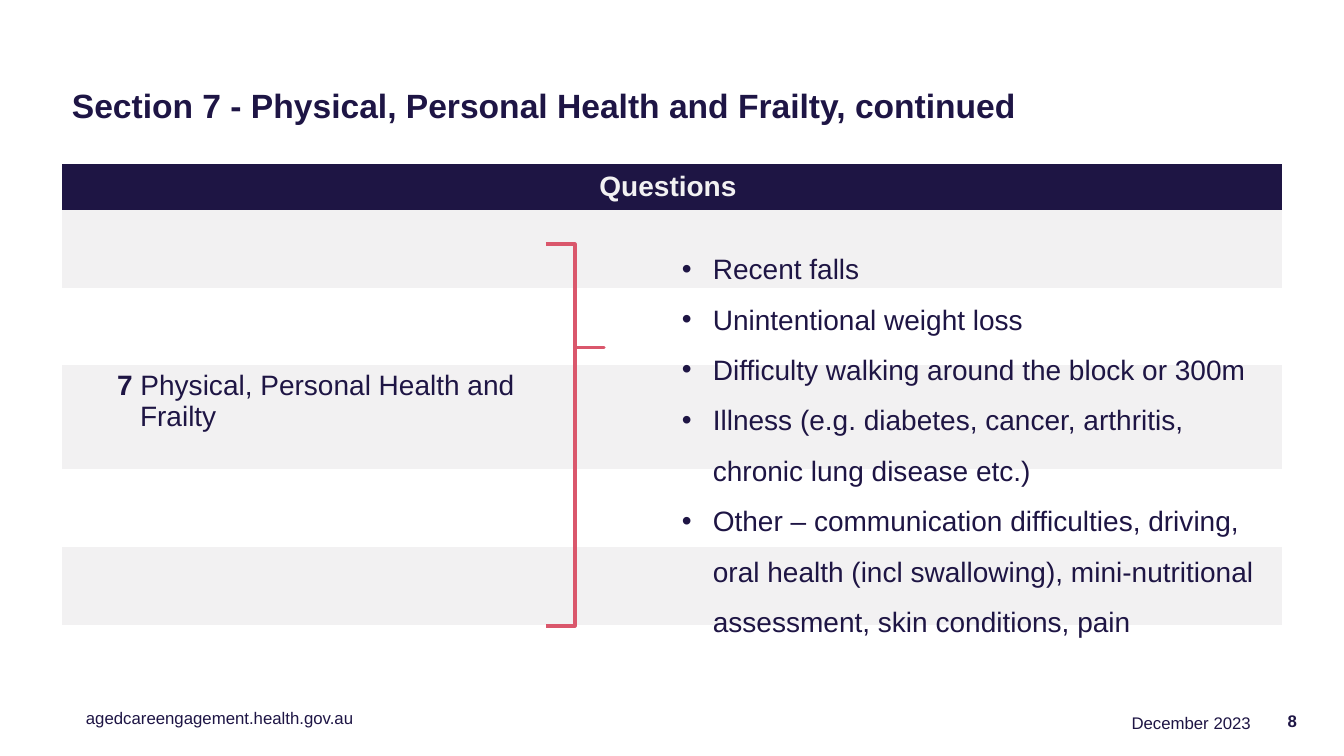
from lxml import etree
from pptx import Presentation
from pptx.dml.color import RGBColor
from pptx.enum.shapes import MSO_SHAPE
from pptx.enum.text import MSO_ANCHOR, PP_ALIGN
from pptx.oxml.ns import qn
from pptx.util import Pt

LEFT, CENTER, RIGHT = PP_ALIGN.LEFT, PP_ALIGN.CENTER, PP_ALIGN.RIGHT
TOP, MIDDLE = MSO_ANCHOR.TOP, MSO_ANCHOR.MIDDLE
BRACE = MSO_SHAPE.LEFT_BRACE

COLORS = {"navy": "1E1545", "ink": "1E1544", "pale": "F2F1F2", "rose": "DA576C"}
FONT = "Arial"
NO_GRID = "{2D5ABB26-0587-4C30-8999-92F81FD0307C}"

# text, box in px, format, anchor, alignment
LABELS = [
    ("agedcareengagement.health.gov.au", (76, 703, 288, 30),
     {"size": 12, "color": "navy"}, TOP, LEFT),
    ("8", (1262, 701, 45, 40),
     {"size": 12, "color": "navy", "bold": True}, MIDDLE, RIGHT),
    ("Section 7 - Physical, Personal Health and Frailty, continued",
     (62, 75, 1200, 60), {"size": 24, "color": "navy", "bold": True}, MIDDLE, LEFT),
    ("December 2023", (959, 708, 302, 30),
     {"size": 12, "color": "ink"}, TOP, RIGHT),
]
HEADING = "Questions "
TOPIC = [("7 ", True), ("Physical, Personal Health and\vFrailty", False)]
ITEMS = [
    "Recent falls",
    "Unintentional weight loss",
    "Difficulty walking around the block or 300m",
    "Illness (e.g. diabetes, cancer, arthritis, chronic lung disease etc.)",
    "Other – communication difficulties, driving, oral health (incl swallowing), "
    "mini-nutritional assessment, skin conditions, pain",
]
COLS = [45, 334, 64, 355, 57, 365]
ROWS = [46, 78, 77, 104, 78, 78, 52]
TABLE_AT = (62, 164)
BRACE_BOX = (546, 244, 58, 382)
ITEMS_BOX = (672, 230, 619, 411)
TOPIC_ROW = 3


def px(n):
    return round(n * 914400 / 100.8)


def rgb(name):
    return RGBColor.from_string(COLORS[name])


def style(font, size=20, color="ink", bold=False):
    form = {"name": FONT, "size": Pt(size), "bold": bold}
    for key, value in form.items():
        setattr(font, key, value)
    font.color.rgb = rgb(color)


def hang(para, width, mark=None):
    """Give a paragraph a hanging indent and, if asked, a bullet."""
    props = para._p.get_or_add_pPr()
    props.set("marL", str(px(width)))
    props.set("indent", str(-px(width)))
    if mark:
        etree.SubElement(props, qn("a:buFont")).set("typeface", FONT)
        etree.SubElement(props, qn("a:buChar")).set("char", mark)


def add_box(slide, box, anchor=TOP):
    frame = slide.shapes.add_textbox(*map(px, box)).text_frame
    frame.word_wrap = True
    frame.vertical_anchor = anchor
    return frame


def add_label(slide, text, box, form, anchor, align):
    para = add_box(slide, box, anchor).paragraphs[0]
    para.text = text
    para.alignment = align
    style(para.font, **form)


def add_grid(slide):
    size = (sum(COLS), sum(ROWS))
    frame = slide.shapes.add_table(len(ROWS), len(COLS), *map(px, TABLE_AT + size))
    frame.element.xpath(".//a:tableStyleId")[0].text = NO_GRID
    table = frame.table
    for col, width in zip(table.columns, COLS):
        col.width = px(width)
    for r, height in enumerate(ROWS):
        table.rows[r].height = px(height)
        for cell in table.rows[r].cells:
            if r == 0 or r % 2:
                cell.fill.solid()
                cell.fill.fore_color.rgb = rgb("pale" if r else "ink")
            else:
                cell.fill.background()

    head = table.cell(0, 0)
    head.merge(table.cell(0, len(COLS) - 1))
    head.vertical_anchor = MIDDLE
    para = head.text_frame.paragraphs[0]
    para.text = HEADING
    para.alignment = CENTER
    style(para.font, color="pale", bold=True)

    for r in (TOPIC_ROW - 1, TOPIC_ROW):
        table.cell(r, 1).merge(table.cell(r, 3))
    para = table.cell(TOPIC_ROW, 1).text_frame.paragraphs[0]
    hang(para, 23)
    for i, (text, bold) in enumerate(TOPIC):
        for j, line in enumerate(text.split("\v")):
            if j:
                para.add_line_break()
            run = para.add_run()
            run.text = line
            style(run.font, bold=bold)


def add_brace(slide):
    brace = slide.shapes.add_shape(BRACE, *map(px, BRACE_BOX))
    brace.rotation = 180
    brace.adjustments[0] = 0
    brace.adjustments[1] = 0.73
    brace.shadow.inherit = False
    brace.fill.background()
    brace.line.color.rgb = rgb("rose")
    brace.line.width = Pt(2.25)


def add_items(slide):
    frame = add_box(slide, ITEMS_BOX)
    for i, text in enumerate(ITEMS):
        para = frame.add_paragraph() if i else frame.paragraphs[0]
        para.text = text
        hang(para, 31, "•")
        para.line_spacing = 1.5
        style(para.font)


def main():
    deck = Presentation()
    deck.slide_width, deck.slide_height = px(1344), px(756)
    slide = deck.slides.add_slide(deck.slide_layouts[6])
    add_grid(slide)
    add_brace(slide)
    add_items(slide)
    for label in LABELS:
        add_label(slide, *label)
    deck.save("out.pptx")


if __name__ == "__main__":
    main()
